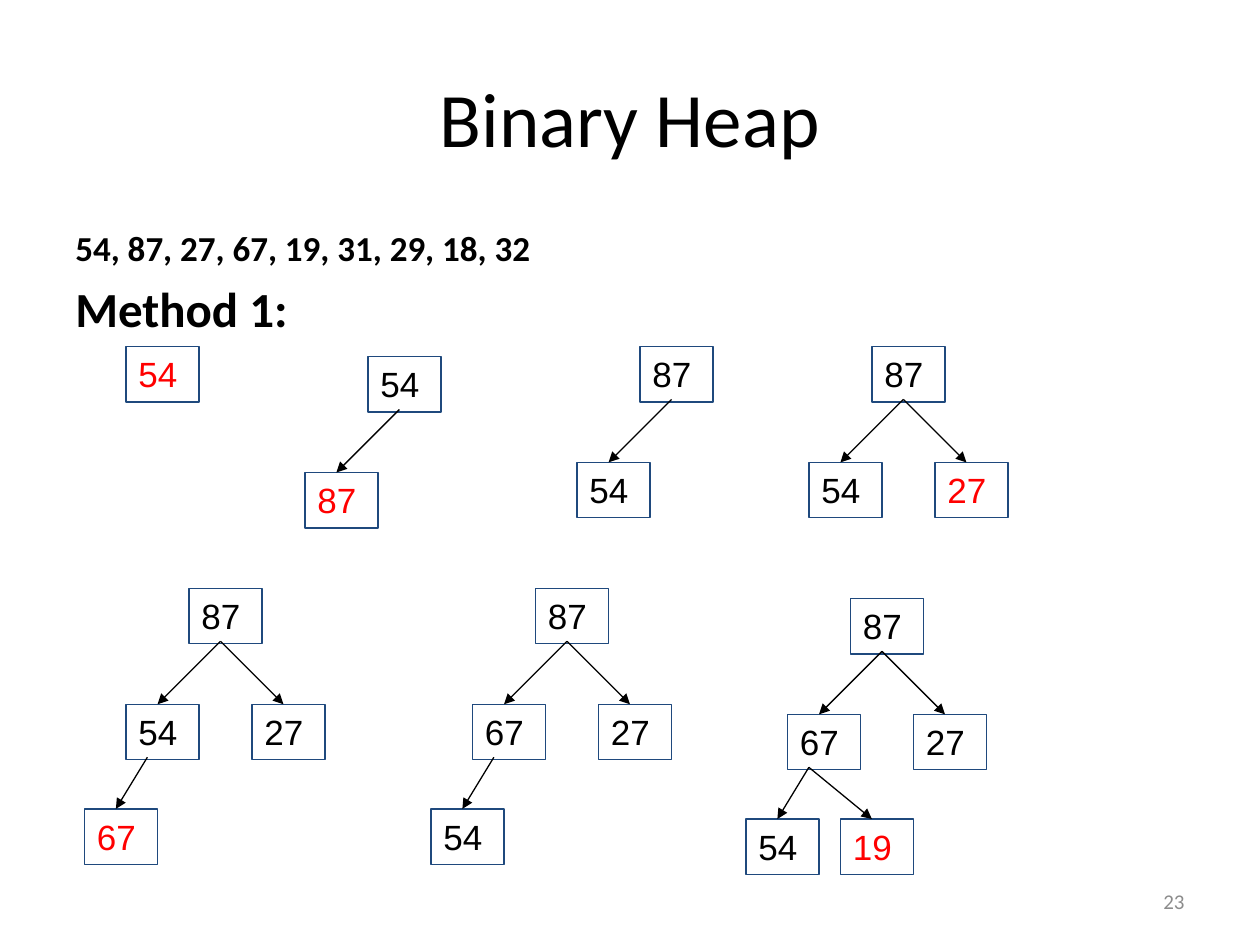
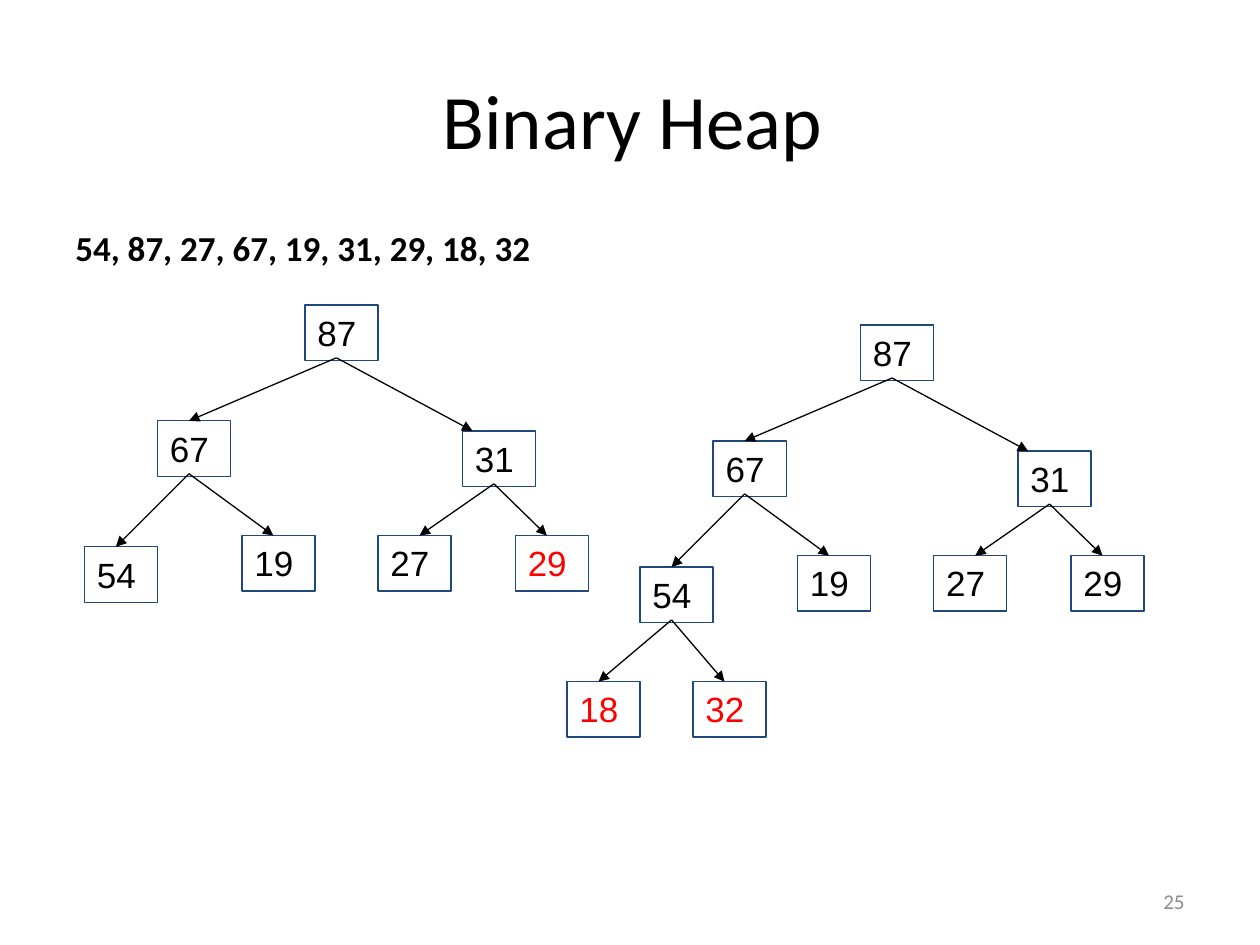
"""Build two slides that show numbers being inserted into a binary heap."""
from lxml.etree import SubElement
from pptx import Presentation
from pptx.dml.color import RGBColor
from pptx.enum.shapes import MSO_CONNECTOR, MSO_SHAPE
from pptx.enum.text import MSO_ANCHOR, PP_ALIGN
from pptx.oxml.ns import qn
from pptx.util import Inches, Pt

COLORS = {"text": "000000", "new": "FF0000", "border": "1F497D", "number": "8C8C8C"}
TITLE = {"name": "Calibri", "size": Pt(44)}
SEQUENCE = {"name": "Calibri", "size": Pt(20), "bold": True}
METHOD = {"name": "Calibri", "size": Pt(28), "bold": True}
PAGE_NUMBER = {"name": "Calibri", "size": Pt(12)}
NODE = {"name": "Arial", "size": Pt(20)}

NODE_WIDTH, NODE_HEIGHT = 0.58, 0.44
ARROW_X, ARROW_Y = 0.25, 0.42

# Offsets from the root, in heap order: the parent of i is (i - 1) // 2.
NARROW = {
    "offsets": [(0, 0), (-0.5, 0.92), (0.5, 0.92), (-0.83, 1.75), (-0.08, 1.75)],
    "starts": {1: 0.17},
    "ends": {},
}
WIDE = {
    "offsets": [(0, 0), (-1.17, 0.92), (1.25, 1), (-1.75, 1.92), (-0.5, 1.83),
                (0.58, 1.83), (1.67, 1.83), (-2.33, 2.83), (-1.33, 2.83)],
    "starts": {},
    "ends": {2: 0.08, 5: 0.33},
}

SLIDES = [
    {
        "title_at": (0.5, 0.3),
        "lines": [("54, 87, 27, 67, 19, 31, 29, 18, 32", SEQUENCE), ("Method 1:", METHOD)],
        "number": "23",
        "layout": NARROW,
        "trees": [
            (1, 2.75, [54], {54}),
            (2.92, 2.83, [54, 87], {87}),
            (5.08, 2.75, [87, 54], set()),
            (6.92, 2.75, [87, 54, 27], {27}),
            (1.5, 4.67, [87, 54, 27, 67], {67}),
            (4.25, 4.67, [87, 67, 27, 54], set()),
            (6.75, 4.75, [87, 67, 27, 54, 19], {19}),
        ],
    },
    {
        "title_at": (0.52, 0.32),
        "lines": [("54, 87, 27, 67, 19, 31, 29, 18, 32", SEQUENCE)],
        "number": "25",
        "layout": WIDE,
        "trees": [
            (2.42, 2.42, [87, 67, 31, 54, 19, 27, 29], {29}),
            (6.83, 2.58, [87, 67, 31, 54, 19, 27, 29, 18, 32], {18, 32}),
        ],
    },
]


def write(paragraph, text, font_format, color="text", alignment=PP_ALIGN.LEFT):
    paragraph.alignment = alignment
    run = paragraph.add_run()
    run.text = text
    for name, value in font_format.items():
        setattr(run.font, name, value)
    run.font.color.rgb = RGBColor.from_string(COLORS[color])


def add_text_frame(slide, left, top, width, height, anchor):
    text_frame = slide.shapes.add_textbox(
        Inches(left), Inches(top), Inches(width), Inches(height)).text_frame
    text_frame.word_wrap = True
    text_frame.vertical_anchor = anchor
    return text_frame


presentation = Presentation()
presentation.slide_width = Inches(10)
presentation.slide_height = Inches(7.5)

for content in SLIDES:
    slide = presentation.slides.add_slide(presentation.slide_layouts[6])

    title = add_text_frame(slide, *content["title_at"], 9, 1.25, MSO_ANCHOR.MIDDLE)
    write(title.paragraphs[0], "Binary Heap", TITLE, alignment=PP_ALIGN.CENTER)

    body = add_text_frame(slide, 0.5, 1.75, 8.83, 4.95, MSO_ANCHOR.TOP)
    for index, (text, font_format) in enumerate(content["lines"]):
        paragraph = body.add_paragraph() if index else body.paragraphs[0]
        paragraph.space_before = Pt(5.6 * index)
        write(paragraph, text, font_format)

    footer = add_text_frame(slide, 7.17, 6.95, 2.33, 0.4, MSO_ANCHOR.MIDDLE)
    write(footer.paragraphs[0], content["number"], PAGE_NUMBER, "number", PP_ALIGN.RIGHT)

    layout = content["layout"]
    for root_left, root_top, values, new_values in content["trees"]:
        tree = slide.shapes.add_group_shape().shapes
        corners = [(root_left + x, root_top + y) for x, y in layout["offsets"]]

        for index, (value, (left, top)) in enumerate(zip(values, corners)):
            node = tree.add_shape(MSO_SHAPE.RECTANGLE, Inches(left), Inches(top),
                                  Inches(NODE_WIDTH), Inches(NODE_HEIGHT))
            node.shadow.inherit = False
            node.fill.background()
            node.line.color.rgb = RGBColor.from_string(COLORS["border"])
            node.line.width = Pt(0.75)
            node.text_frame.word_wrap = True
            node.text_frame.vertical_anchor = MSO_ANCHOR.TOP
            color = "new" if value in new_values else "text"
            write(node.text_frame.paragraphs[0], str(value), NODE, color)

            if index == 0:
                continue
            parent = (index - 1) // 2
            parent_left, parent_top = corners[parent]
            arrow = tree.add_connector(
                MSO_CONNECTOR.STRAIGHT,
                Inches(parent_left + layout["starts"].get(parent, ARROW_X)),
                Inches(parent_top + ARROW_Y),
                Inches(left + layout["ends"].get(index, ARROW_X)),
                Inches(top))
            arrow.line.color.rgb = RGBColor.from_string(COLORS["text"])
            arrow.line.width = Pt(0.75)
            SubElement(arrow.line._get_or_add_ln(), qn("a:tailEnd"), type="triangle")
            SubElement(arrow._element.spPr, qn("a:effectLst"))

presentation.save("out.pptx")
